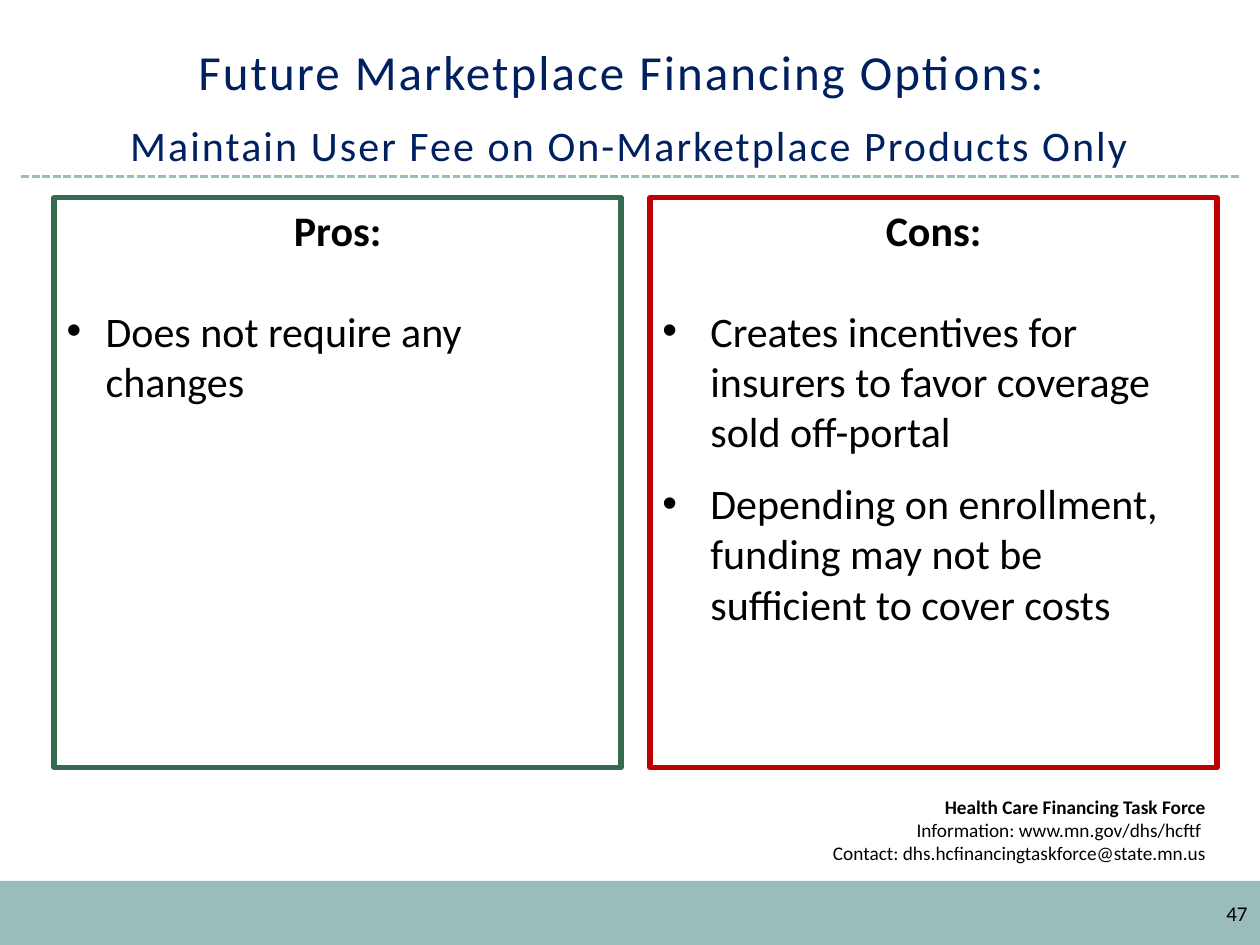
from lxml import etree
from pptx import Presentation
from pptx.dml.color import RGBColor
from pptx.enum import dml, shapes, text
from pptx.oxml import ns
from pptx.util import Inches, Pt

COLORS = {"teal": "9ABCBB", "navy": "002060", "green": "366A51",
          "red": "C00000", "white": "FFFFFF", "black": "000000"}


def add_box(left, top, width, height, fill, outline=None):
    box = page.shapes.add_shape(shapes.MSO_SHAPE.RECTANGLE, Inches(left), Inches(top),
                                Inches(width), Inches(height))
    box.shadow.inherit = False
    box.fill.solid()
    box.fill.fore_color.rgb = RGBColor.from_string(COLORS[fill])
    if outline:
        box.line.color.rgb = RGBColor.from_string(COLORS[outline])
        box.line.width = Pt(3)
    else:
        box.line.fill.background()
    box.text_frame.word_wrap = True
    box.text_frame.vertical_anchor = text.MSO_ANCHOR.TOP
    return box


def style(item, size, color="black", bold=False):
    item.font.name = "Calibri"
    item.font.size = Pt(size)
    item.font.bold = bold
    item.font.color.rgb = RGBColor.from_string(COLORS[color])


deck = Presentation()
deck.slide_width, deck.slide_height = Inches(10), Inches(7.5)
page = deck.slides.add_slide(deck.slide_layouts[5])

add_box(0, 6.99, 10, 0.51, "teal")

divider = page.shapes.add_connector(shapes.MSO_CONNECTOR.STRAIGHT, Inches(0.17), Inches(1.4),
                                    Inches(9.83), Inches(1.4))
divider.line.color.rgb = RGBColor.from_string(COLORS["teal"])
divider.line.width = Pt(1.5)
divider.line.dash_style = dml.MSO_LINE.SQUARE_DOT
etree.SubElement(divider._element.spPr, ns.qn("a:effectLst"))

contact = add_box(4.54, 6.26, 5.13, 0.67, "white")
frame = contact.text_frame
frame.text = ("Health Care Financing Task Force\vInformation: www.mn.gov/dhs/hcftf \n"
              "Contact: dhs.hcfinancingtaskforce@state.mn.us")
for para in frame.paragraphs:
    para.alignment = text.PP_ALIGN.RIGHT
    style(para, 11)
frame.paragraphs[0].runs[0].font.bold = True

title = page.shapes.title
title.left, title.top = Inches(0.33), Inches(0.25)
title.width, title.height = Inches(9.33), Inches(1.15)
title.text_frame.vertical_anchor = text.MSO_ANCHOR.BOTTOM
title.text_frame.text = ("Future Marketplace Financing Options: \v"
                         "Maintain User Fee on On-Marketplace Products Only")
para = title.text_frame.paragraphs[0]
para.alignment = text.PP_ALIGN.CENTER
para.line_spacing = Pt(40)
for span, size in zip(para.runs, (28, 24)):
    style(span, size, "navy")
    span.font._element.set("spc", "120")

panels = [
    ("Pros:", "green", 0.43, 0.31, ["Does not require any changes"]),
    ("Cons:", "red", 5.16, 0.38,
     ["Creates incentives for insurers to favor coverage sold off-portal",
      "Depending on enrollment, funding may not be sufficient to cover costs"]),
]
for heading, color, left, indent, points in panels:
    frame = add_box(left, 1.57, 4.5, 4.52, "white", color).text_frame
    para = frame.paragraphs[0]
    para.text = heading
    para.alignment = text.PP_ALIGN.CENTER
    para.space_after = Pt(29)
    style(para, 24, bold=True)
    for point in points:
        para = frame.add_paragraph()
        para.text = point
        para.alignment = text.PP_ALIGN.LEFT
        para.space_after = Pt(12)
        props = para._p.get_or_add_pPr()
        props.set("marL", str(Inches(indent)))
        props.set("indent", str(-Inches(indent)))
        etree.SubElement(props, ns.qn("a:buFont"), typeface="Arial")
        etree.SubElement(props, ns.qn("a:buChar"), char="•")
        style(para, 24)

number = page.shapes.add_textbox(Inches(7.67), Inches(7.1), Inches(2.33), Inches(0.4))
number.text_frame.word_wrap = True
number.text_frame.text = "47"
para = number.text_frame.paragraphs[0]
para.alignment = text.PP_ALIGN.RIGHT
style(para, 12)

deck.save("out.pptx")
